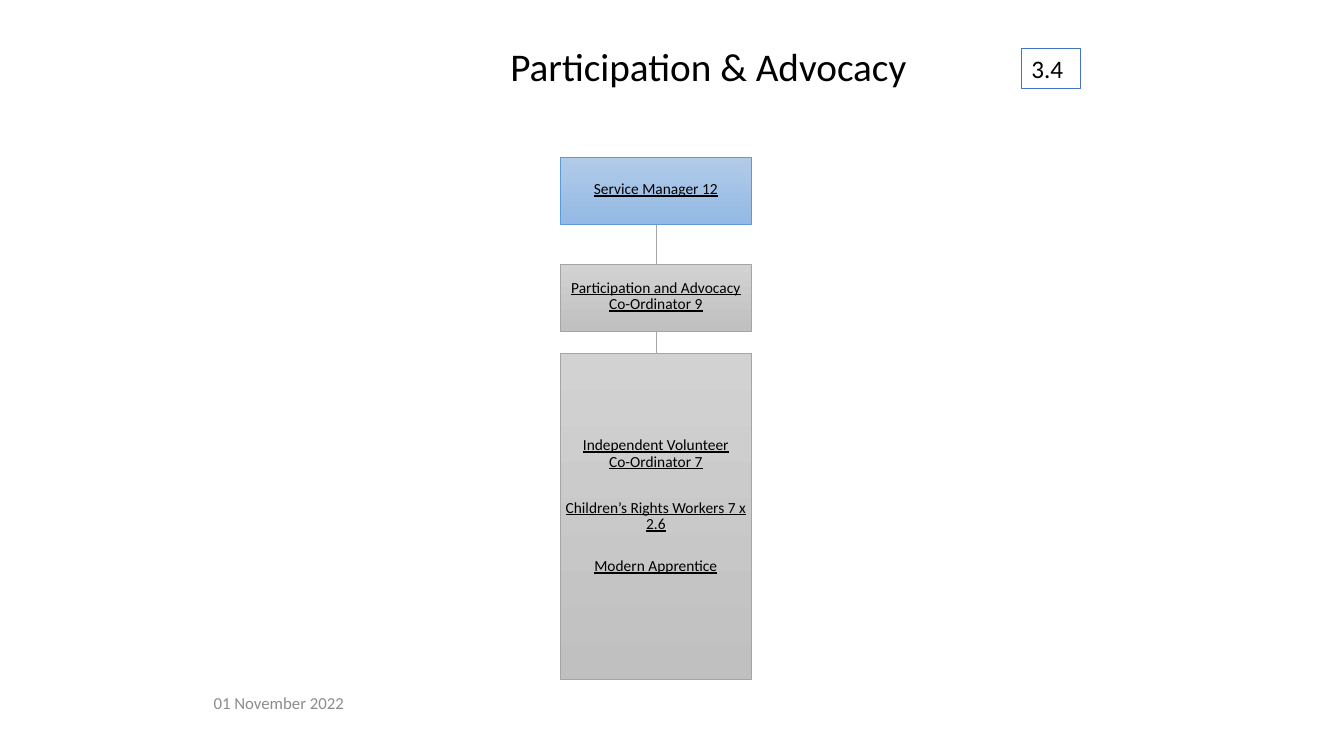
from dataclasses import dataclass

from lxml.etree import SubElement
from pptx import Presentation
from pptx.dml.color import RGBColor
from pptx.enum.shapes import MSO_CONNECTOR, MSO_SHAPE
from pptx.enum.text import MSO_ANCHOR as Anchor, MSO_AUTO_SIZE as AutoSize, PP_ALIGN as Align
from pptx.oxml.ns import qn
from pptx.slide import Slide
from pptx.text.text import TextFrame
from pptx.util import Inches, Pt

BLACK = RGBColor(0x00, 0x00, 0x00)
DATE_GREY = RGBColor(0x8C, 0x8C, 0x8C)
BADGE_BLUE = RGBColor(0x44, 0x72, 0xC4)
LINE_GREY = RGBColor(0xA5, 0xA5, 0xA5)
LINE_BLUE = RGBColor(0x5B, 0x9B, 0xD5)
GREY_FADE = (RGBColor(0xD2, 0xD2, 0xD2), RGBColor(0xC0, 0xC0, 0xC0))
BLUE_FADE = (RGBColor(0xB1, 0xCB, 0xE9), RGBColor(0x93, 0xB9, 0xE4))

BOX_LEFT, BOX_WIDTH = 5.56, 1.89
CENTRE = 6.51


@dataclass(frozen=True)
class Role:
    title: str
    gap_before: float = 0


@dataclass(frozen=True)
class Post:
    top: float
    height: float
    roles: tuple[Role, ...]
    fade: tuple[RGBColor, RGBColor] = GREY_FADE
    outline: RGBColor = LINE_GREY
    bottom_inset: float = 0.03


POSTS = (
    Post(1.56, 0.67, (Role("Service Manager 12"),), BLUE_FADE, LINE_BLUE),
    Post(2.62, 0.67, (Role("Participation and Advocacy Co-Ordinator 9"),)),
    Post(
        3.51,
        3.23,
        (
            Role("Independent Volunteer\vCo-Ordinator 7"),
            Role("Children’s Rights Workers 7 x 2.6", 21),
            Role("Modern Apprentice", 18),
        ),
        bottom_inset=0.21,
    ),
)


def apply(target: object, values: dict) -> None:
    for name, value in values.items():
        setattr(target, name, value)


def write(frame: TextFrame, roles: tuple[Role, ...], size: float, color: RGBColor = BLACK,
          align: Align = Align.LEFT, spacing: float = 1.0, underline: bool = False) -> None:
    for index, role in enumerate(roles):
        para = frame.add_paragraph() if index else frame.paragraphs[0]
        para.text = role.title
        apply(para, {"alignment": align, "line_spacing": spacing,
                     "space_before": Pt(role.gap_before), "space_after": Pt(0)})
        for span in para.runs:
            apply(span.font, {"name": "Calibri", "size": Pt(size), "underline": underline})
            span.font.color.rgb = color


def add_title(page: Slide) -> None:
    title = page.shapes.title
    apply(title, {"left": Inches(4.62), "top": Inches(0.39),
                  "width": Inches(4.81), "height": Inches(0.59)})
    apply(title.text_frame, {"vertical_anchor": Anchor.MIDDLE, "word_wrap": True,
                             "auto_size": AutoSize.NONE})
    write(title.text_frame, (Role("Participation & Advocacy"),), 28, align=Align.CENTER, spacing=0.9)


def add_badge(page: Slide) -> None:
    badge = page.shapes.add_shape(MSO_SHAPE.RECTANGLE, Inches(10.13), Inches(0.48),
                                  Inches(0.59), Inches(0.4))
    badge.shadow.inherit = False
    badge.fill.background()
    badge.line.color.rgb = BADGE_BLUE
    badge.line.width = Pt(0.75)
    apply(badge.text_frame, {"vertical_anchor": Anchor.TOP, "word_wrap": True})
    write(badge.text_frame, (Role("3.4"),), 18)


def add_date(page: Slide) -> None:
    date = page.shapes.add_textbox(Inches(2.02), Inches(6.82), Inches(1.57), Inches(0.3))
    apply(date.text_frame, {"vertical_anchor": Anchor.MIDDLE, "word_wrap": True})
    write(date.text_frame, (Role("01 November 2022"),), 12, DATE_GREY)


def add_link(page: Slide, upper: Post, lower: Post) -> None:
    link = page.shapes.add_connector(MSO_CONNECTOR.STRAIGHT, Inches(CENTRE),
                                     Inches(upper.top + upper.height),
                                     Inches(CENTRE), Inches(lower.top))
    link.line.color.rgb = LINE_GREY
    link.line.width = Pt(0.5)
    SubElement(link.element.spPr, qn("a:effectLst"))


def add_post(page: Slide, post: Post) -> None:
    box = page.shapes.add_shape(MSO_SHAPE.RECTANGLE, Inches(BOX_LEFT), Inches(post.top),
                                Inches(BOX_WIDTH), Inches(post.height))
    box.shadow.inherit = False
    box.fill.gradient()
    box.fill.gradient_angle = 270
    for stop, color in zip(box.fill.gradient_stops, post.fade):
        stop.color.rgb = color
    box.line.color.rgb = post.outline
    box.line.width = Pt(0.5)
    apply(box.text_frame, {"margin_left": 0, "margin_right": 0, "margin_top": 0,
                           "margin_bottom": Inches(post.bottom_inset),
                           "vertical_anchor": Anchor.MIDDLE, "word_wrap": True})
    write(box.text_frame, post.roles, 11, align=Align.CENTER, spacing=0.9, underline=True)


def main() -> None:
    deck = Presentation()
    deck.slide_width, deck.slide_height = Inches(13.33), Inches(7.5)
    page = deck.slides.add_slide(deck.slide_layouts[5])
    add_title(page)
    add_badge(page)
    add_date(page)
    for upper, lower in zip(POSTS, POSTS[1:]):
        add_link(page, upper, lower)
    for post in POSTS:
        add_post(page, post)
    deck.save("out.pptx")


if __name__ == "__main__":
    main()
